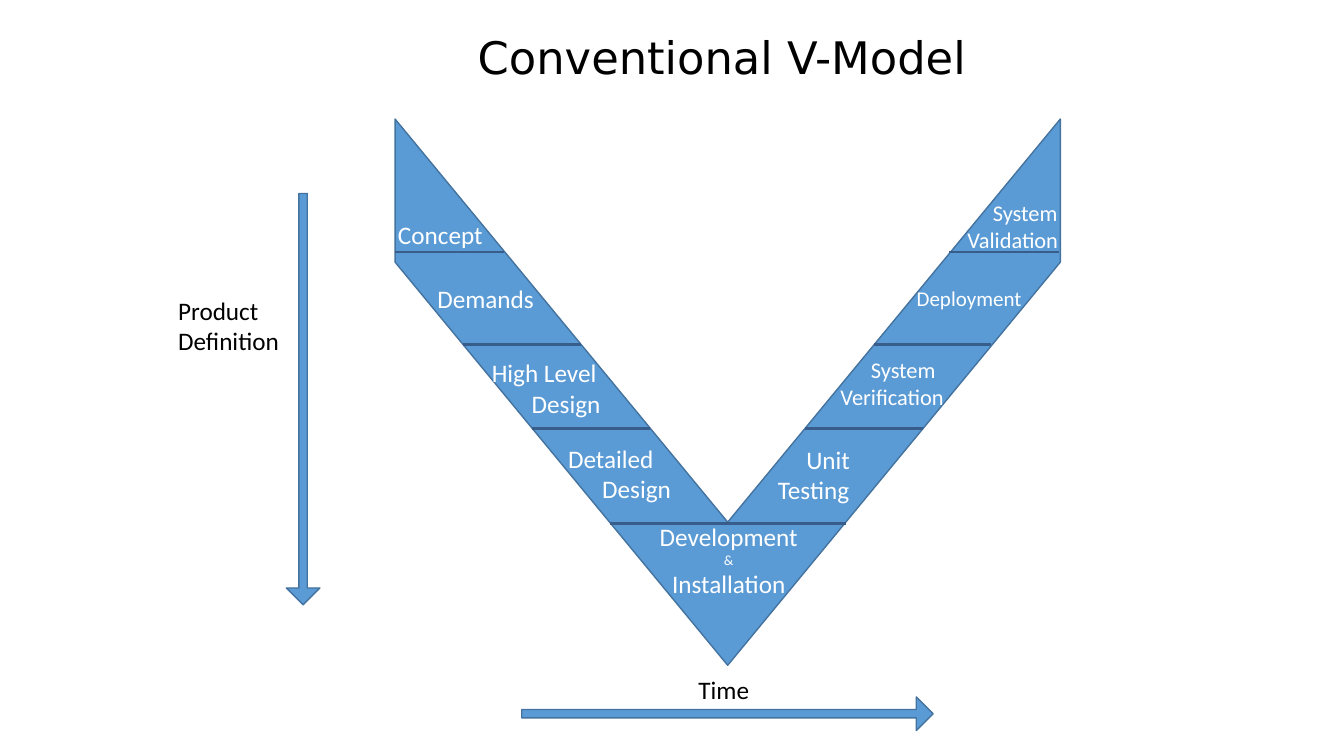
from dataclasses import dataclass

from lxml import etree
from pptx import Presentation
from pptx.dml.color import RGBColor
from pptx.enum.shapes import MSO_CONNECTOR, MSO_SHAPE
from pptx.enum.text import MSO_AUTO_SIZE, PP_ALIGN
from pptx.oxml.ns import qn
from pptx.shapes.autoshape import Shape
from pptx.shapes.connector import Connector
from pptx.slide import Slide
from pptx.util import Pt

CHEVRON = MSO_SHAPE.CHEVRON
ARROW = MSO_SHAPE.DOWN_ARROW
STRAIGHT = MSO_CONNECTOR.STRAIGHT
GROW = MSO_AUTO_SIZE.SHAPE_TO_FIT_TEXT
LEFT = PP_ALIGN.LEFT
CENTER = PP_ALIGN.CENTER

BLUE = RGBColor(0x5B, 0x9B, 0xD5)
EDGE = RGBColor(0x43, 0x73, 0x9E)
NAVY = RGBColor(0x38, 0x5D, 0x8A)
BLACK = RGBColor(0, 0, 0)
WHITE = RGBColor(255, 255, 255)


@dataclass(frozen=True)
class Block:
    kind: MSO_SHAPE
    left: float
    top: float
    width: float
    height: float
    turn: float
    ratios: tuple[float, ...]


@dataclass(frozen=True)
class Rule:
    start: float
    end: float
    y: float


@dataclass(frozen=True)
class Line:
    text: str
    size: float = 18
    indent: float = 0


@dataclass(frozen=True)
class Label:
    left: float
    top: float
    width: float
    height: float
    lines: tuple[Line, ...]
    color: RGBColor = WHITE
    align: PP_ALIGN = LEFT
    font: str = "Calibri"


BLOCKS = (
    Block(CHEVRON, 324.7, 42.5, 390.2, 475.2, 90, (0.738,)),
    Block(ARROW, 507.6, 362.9, 24, 293.8, 270, (0.25, 0.5)),
    Block(ARROW, 204.5, 138.2, 24, 293.8, 0, (0.25, 0.5)),
)

RULES = (
    Rule(282.2, 360, 180),
    Rule(330.5, 414.7, 246.2),
    Rule(380.2, 464.4, 306),
    Rule(435.6, 604.1, 373.7),
    Rule(678.2, 756.7, 180),
    Rule(624.2, 707.8, 246.2),
    Rule(575.3, 659.5, 306),
)

LABELS = (
    Label(120.2, 18, 720, 46, (Line("Conventional V-Model", 32, 71.2),),
          BLACK, CENTER, "DejaVu Sans"),
    Label(120.2, 207.4, 108, 51, (Line("Product Definition"),), BLACK),
    Label(491.8, 478.1, 108, 29, (Line("Time"),), BLACK),
    Label(277.2, 153.4, 91.4, 29, (Line("Concept"),)),
    Label(305.3, 198.7, 91.4, 29, (Line("Demands"),)),
    Label(344.2, 252, 93.6, 51, (Line("High Level"), Line("Design", 18, 28.5))),
    Label(394.6, 313.2, 93.6, 51,
          (Line("Detailed", 18, 4.1), Line("Design", 18, 28.5))),
    Label(461.5, 368.6, 118.1, 65.5,
          (Line("Development"), Line("&", 10), Line("Installation")),
          WHITE, CENTER),
    Label(548.6, 313.9, 93.6, 51, (Line("Unit", 18, 20.3), Line("Testing"))),
    Label(593.3, 250.6, 97.9, 46,
          (Line("System", 16, 21.7), Line("Verification", 16))),
    Label(630.7, 200.2, 115.2, 25.2, (Line("Deployment", 15, 17),)),
    Label(680.4, 139, 97.9, 46,
          (Line("System", 16, 21.7), Line("Validation", 16, 3.6))),
)


def add_block(slide: Slide, block: Block) -> Shape:
    shape = slide.shapes.add_shape(
        block.kind, Pt(block.left), Pt(block.top), Pt(block.width), Pt(block.height))
    shape.rotation = block.turn
    for index, ratio in enumerate(block.ratios):
        shape.adjustments[index] = ratio
    shape.shadow.inherit = False
    shape.fill.solid()
    shape.fill.fore_color.rgb = BLUE
    shape.line.color.rgb = EDGE
    shape.line.width = Pt(1)
    return shape


def add_rule(slide: Slide, rule: Rule) -> Connector:
    line = slide.shapes.add_connector(
        STRAIGHT, Pt(rule.start), Pt(rule.y), Pt(rule.end), Pt(rule.y))
    line.line.color.rgb = NAVY
    line.line.width = Pt(2)
    etree.SubElement(line._element.spPr, qn("a:effectLst"))
    return line


def add_label(slide: Slide, label: Label) -> Shape:
    box = slide.shapes.add_textbox(
        Pt(label.left), Pt(label.top), Pt(label.width), Pt(label.height))
    frame = box.text_frame
    frame.word_wrap = True
    frame.auto_size = GROW
    frame.text = "\n".join(line.text for line in label.lines)
    for para, line in zip(frame.paragraphs, label.lines):
        para.alignment = label.align
        if line.indent:
            para._p.get_or_add_pPr().set("marL", str(Pt(line.indent)))
        font = para.runs[0].font
        font.name = label.font
        font.size = Pt(line.size)
        font.color.rgb = label.color
    return box


def main() -> None:
    deck = Presentation()
    deck.slide_width, deck.slide_height = Pt(960), Pt(540)
    slide = deck.slides.add_slide(deck.slide_layouts[6])
    for block in BLOCKS:
        add_block(slide, block)
    for rule in RULES:
        add_rule(slide, rule)
    for label in LABELS:
        add_label(slide, label)
    deck.save("out.pptx")


if __name__ == "__main__":
    main()
